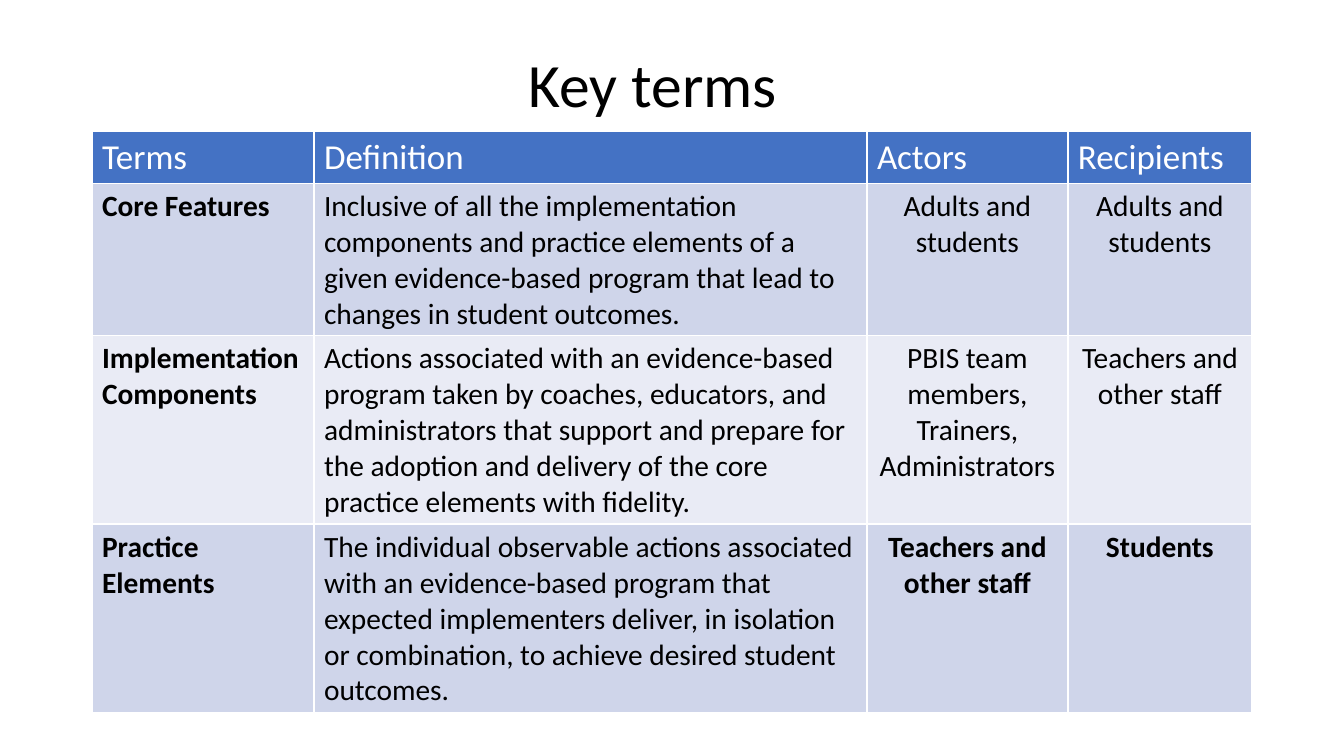
"""Builds the "Key terms" slide: a title above a table of terms."""
from pptx import Presentation
from pptx.dml.color import RGBColor
from pptx.enum.text import MSO_ANCHOR, PP_ALIGN
from pptx.util import Pt

PX = 914400 / 100.8
LEFT, CENTER = PP_ALIGN.LEFT, PP_ALIGN.CENTER
MIDDLE = MSO_ANCHOR.MIDDLE
BLACK = RGBColor(0x00, 0x00, 0x00)
WHITE = RGBColor(0xFF, 0xFF, 0xFF)
BLUE = RGBColor(0x44, 0x72, 0xC4)
BAND_DARK = RGBColor(0xCF, 0xD5, 0xEA)
BAND_LIGHT = RGBColor(0xE9, 0xEB, 0xF5)

HEADERS = ["Terms", "Definition", "Actors", "Recipients"]
TERMS = [
    ["Core Features",
     "Inclusive of all the implementation components and practice elements of a "
     "given evidence-based program that lead to changes in student outcomes.",
     "Adults and students", "Adults and students"],
    ["Implementation Components",
     "Actions associated with an evidence-based program taken by coaches, educators, "
     "and administrators that support and prepare for the adoption and delivery of "
     "the core practice elements with fidelity.",
     "PBIS team members, Trainers, Administrators", "Teachers and other staff"],
    ["Practice Elements",
     "The individual observable actions associated with an evidence-based program "
     "that expected implementers deliver, in isolation or combination, to achieve "
     "desired student outcomes.",
     "Teachers and other staff", "Students"],
]
COL_WIDTHS = [222, 553, 201, 184]
ROW_HEIGHTS = [51, 152, 189, 189]


def px(n):
    return round(n * PX)


def write(tf, text, size=21, color=BLACK, bold=False, align=LEFT, spacing=1.0):
    p = tf.paragraphs[0]
    p.alignment = align
    p.line_spacing = spacing
    r = p.add_run()
    r.text = text
    r.font.name = "Calibri"
    r.font.size = Pt(size)
    r.font.bold = bold
    r.font.color.rgb = color


prs = Presentation()
prs.slide_width, prs.slide_height = px(1344), px(756)
s = prs.slides.add_slide(prs.slide_layouts[6])

title = s.shapes.add_textbox(px(48), px(32), px(1210), px(112))
tf = title.text_frame
tf.word_wrap = True
tf.vertical_anchor = MIDDLE
write(tf, "Key terms", size=44, align=CENTER, spacing=0.9)

table = s.shapes.add_table(len(ROW_HEIGHTS), len(COL_WIDTHS), px(92), px(131),
                           px(sum(COL_WIDTHS)), px(sum(ROW_HEIGHTS))).table
for col, width in zip(table.columns, COL_WIDTHS):
    col.width = px(width)
for row, height in zip(table.rows, ROW_HEIGHTS):
    row.height = px(height)

for i, texts in enumerate([HEADERS] + TERMS):
    for j, text in enumerate(texts):
        cell = table.cell(i, j)
        cell.fill.solid()
        if i == 0:
            cell.fill.fore_color.rgb = BLUE
            write(cell.text_frame, text, size=25, color=WHITE)
        else:
            cell.fill.fore_color.rgb = BAND_DARK if i % 2 else BAND_LIGHT
            bold = j == 0 or (i == len(TERMS) and j >= 2)
            write(cell.text_frame, text, bold=bold, align=CENTER if j >= 2 else LEFT)

prs.save("out.pptx")
